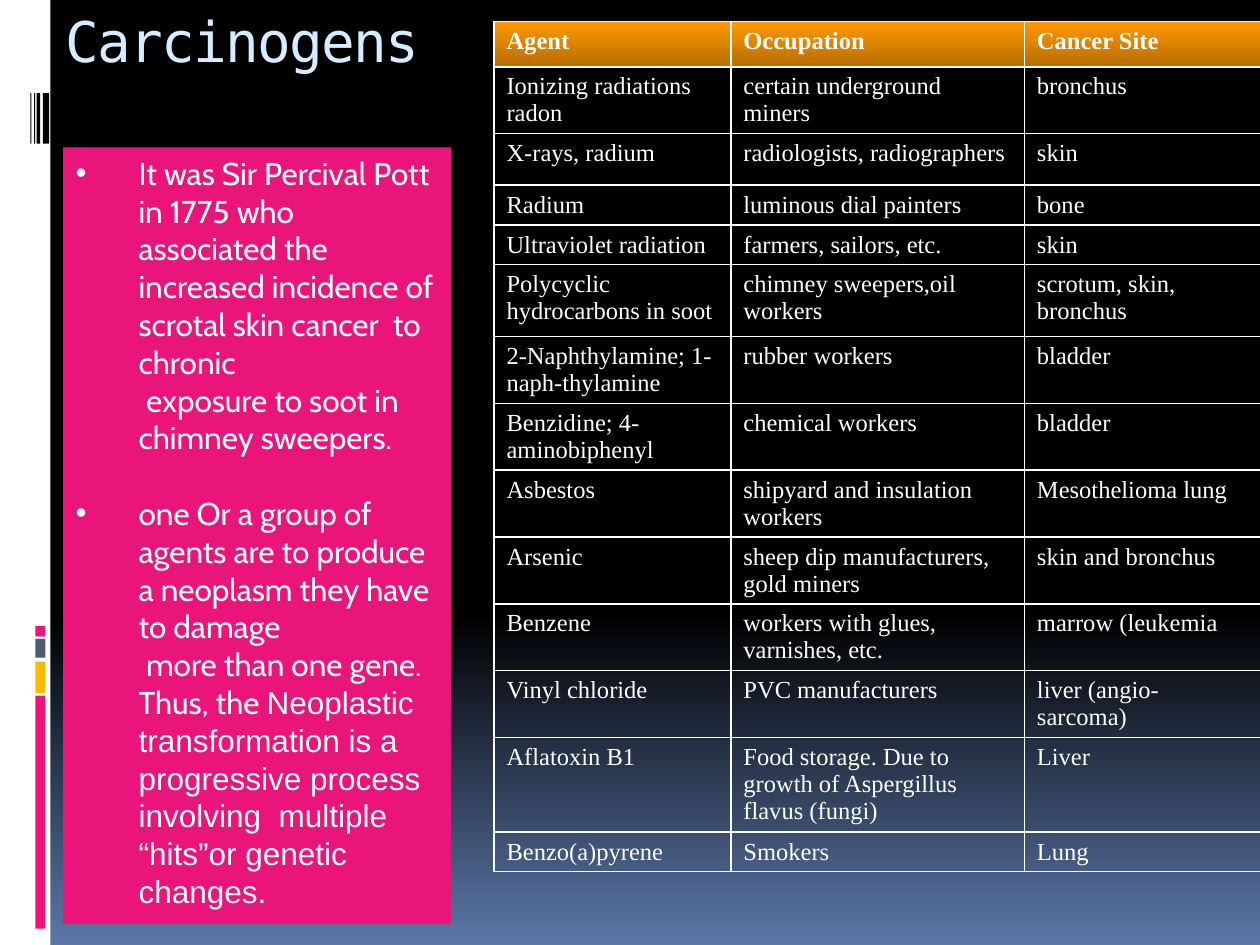
from dataclasses import dataclass

from lxml import etree
from pptx import Presentation, util as u
from pptx.dml.color import RGBColor
from pptx.enum import shapes, text
from pptx.oxml.ns import qn
from pptx.util import Inches


@dataclass(frozen=True)
class Theme:
    white: str = "FFFFFF"
    black: str = "000000"
    pink: str = "EA157A"
    yellow: str = "FEB80A"
    slate: str = "4E5B6F"
    sky: str = "5B77A8"
    title: str = "D6ECFF"
    header_top: str = "FF9900"
    header_bottom: str = "B66D00"
    title_size: int = 32
    body_size: int = 18
    table_size: int = 14


theme = Theme()


def format_font(font, color, **values):
    font.color.rgb = RGBColor.from_string(color)
    for name, value in values.items():
        setattr(font, name, value)


def fill_downward(fill, *stops):
    """Fill with a vertical gradient of two (position, colour) stops."""
    fill.gradient()
    fill.gradient_angle = 270
    for stop, (position, color) in zip(fill.gradient_stops, stops):
        stop.position = position
        stop.color.rgb = RGBColor.from_string(color)


prs = Presentation()
prs.slide_width, prs.slide_height = Inches(10), Inches(7.5)
slide = prs.slides.add_slide(prs.slide_layouts[1])
fill_downward(slide.background.fill, (0.65, theme.black), (1, theme.sky))

# Side strip: white band, colour blocks and barcode
strip = [
    (0, 0, 0.4, 7.5, theme.white),
    (0.28, 5.52, 0.08, 1.85, theme.pink),
    (0.28, 5.25, 0.08, 0.25, theme.yellow),
    (0.28, 5.07, 0.08, 0.15, theme.slate),
    (0.28, 4.97, 0.08, 0.08, theme.pink),
]
barcode = [(0.34, 0.05), (0.29, 0.03), (0.27, 0.01), (0.24, 0.01)]
strip += [(left, 0.74, width, 0.4, theme.black) for left, width in barcode]
for *place, color in strip:
    block = slide.shapes.add_shape(shapes.MSO_SHAPE.RECTANGLE, *map(Inches, place))
    block.shadow.inherit = False
    block.fill.solid()
    block.fill.fore_color.rgb = RGBColor.from_string(color)
    block.line.fill.background()

# Title and pink history panel
title, history = slide.shapes.title, slide.placeholders[1]
for holder, place in ((title, (0.42, 0, 8.5, 1)), (history, (0.5, 1.17, 3.08, 6.16))):
    holder.left, holder.top, holder.width, holder.height = map(Inches, place)
    frame_format = {
        "word_wrap": True,
        "auto_size": text.MSO_AUTO_SIZE.NONE,
        "vertical_anchor": text.MSO_ANCHOR.TOP,
    }
    for name, value in frame_format.items():
        setattr(holder.text_frame, name, value)

title.text_frame.text = "Carcinogens"
heading = title.text_frame.paragraphs[0]
heading.alignment = text.PP_ALIGN.LEFT
format_font(heading.runs[0].font, theme.title, name="DejaVu Sans Mono",
            size=u.Pt(theme.title_size))
heading.runs[0]._r.get_or_add_rPr().set("spc", "-100")

history.fill.solid()
history.fill.fore_color.rgb = RGBColor.from_string(theme.pink)

# Each paragraph: bulleted, space before in points, runs of (wording, font)
statements = [
    (True, 0, [("It was Sir Percival Pott in 1775 who associated the increased "
                "incidence of scrotal skin cancer  to chronic", "Cabin")]),
    (False, 0, [("exposure to soot in chimney sweepers.", "Cabin")]),
    (True, 21.6, [("one Or a group of agents are to produce a neoplasm they "
                   "have to damage", "Cabin")]),
    (False, 0, [("more than one gene.  Thus, the ", "Cabin"),
                ("Neoplastic transformation is a progressive process involving  "
                 "multiple “hits”or genetic changes.", "Arial")]),
]
for index, (bulleted, gap, runs) in enumerate(statements):
    frame = history.text_frame
    paragraph = frame.add_paragraph() if index else frame.paragraphs[0]
    paragraph.space_before = u.Pt(gap)
    properties = paragraph._p.get_or_add_pPr()
    properties.set("marL", str(Inches(0.5)))
    properties.set("indent", str(Inches(-0.5 if bulleted else 0.06)))
    if bulleted:
        etree.SubElement(properties, qn("a:buFont")).set("typeface", "Arial")
        etree.SubElement(properties, qn("a:buChar")).set("char", "•")
    else:
        etree.SubElement(properties, qn("a:buNone"))
    for wording, face in runs:
        run = paragraph.add_run()
        run.text = wording
        format_font(run.font, theme.white, name=face, size=u.Pt(theme.body_size))

# Agents table: row height, then the three columns
agents = [
    (0.36, "Agent", "Occupation", "Cancer Site"),
    (0.53, "Ionizing radiations radon", "certain underground miners", "bronchus"),
    (0.41, "X-rays, radium", "radiologists, radiographers", "skin"),
    (0.31, "Radium", "luminous dial painters", "bone"),
    (0.31, "Ultraviolet radiation", "farmers, sailors, etc.", "skin"),
    (0.57, "Polycyclic hydrocarbons in soot", "chimney sweepers,oil workers",
     "scrotum, skin, bronchus"),
    (0.53, "2-Naphthylamine; 1-naph-thylamine", "rubber workers", "bladder"),
    (0.53, "Benzidine; 4-aminobiphenyl", "chemical workers", "bladder"),
    (0.53, "Asbestos", "shipyard and insulation workers", "Mesothelioma lung"),
    (0.53, "Arsenic", "sheep dip manufacturers, gold miners", "skin and bronchus"),
    (0.53, "Benzene", "workers with glues, varnishes, etc.", "marrow (leukemia"),
    (0.53, "Vinyl chloride", "PVC manufacturers", "liver (angio-sarcoma)"),
    (0.75, "Aflatoxin B1", "Food storage. Due to growth of Aspergillus flavus (fungi)",
     "Liver"),
    (0.31, "Benzo(a)pyrene", "Smokers", "Lung"),
]
column_widths = [1.88, 2.33, 1.88]
table = slide.shapes.add_table(
    len(agents), len(column_widths), Inches(3.92), Inches(0.17),
    Inches(sum(column_widths)), Inches(sum(row[0] for row in agents))).table
table.horz_banding = False
for column, width in zip(table.columns, column_widths):
    column.width = Inches(width)
for index, (height, *entries) in enumerate(agents):
    is_header = index == 0
    row = table.rows[index]
    row.height = Inches(height)
    for cell, entry in zip(row.cells, entries):
        cell.text = entry
        format_font(cell.text_frame.paragraphs[0].runs[0].font, theme.white,
                    name="Times New Roman", size=u.Pt(theme.table_size), bold=is_header)
        cell_properties = cell._tc.get_or_add_tcPr()
        for side in ("a:lnL", "a:lnR", "a:lnT", "a:lnB"):
            border = etree.SubElement(cell_properties, qn(side), w=str(u.Pt(1)))
            solid = etree.SubElement(border, qn("a:solidFill"))
            etree.SubElement(solid, qn("a:srgbClr"), val=theme.white)
        if is_header:
            fill_downward(cell.fill, (0, theme.header_top), (1, theme.header_bottom))
        else:
            cell.fill.background()

prs.save("out.pptx")
